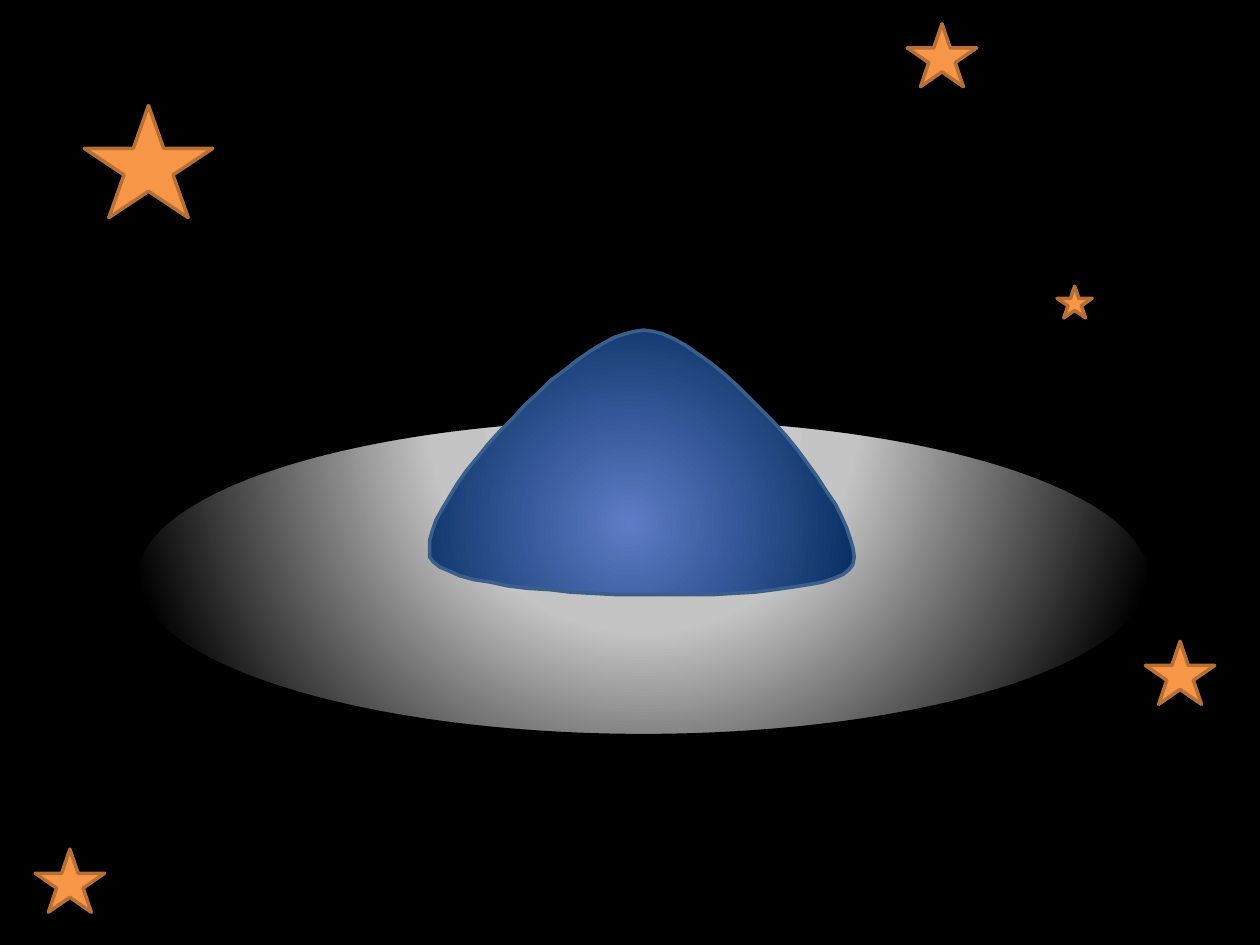
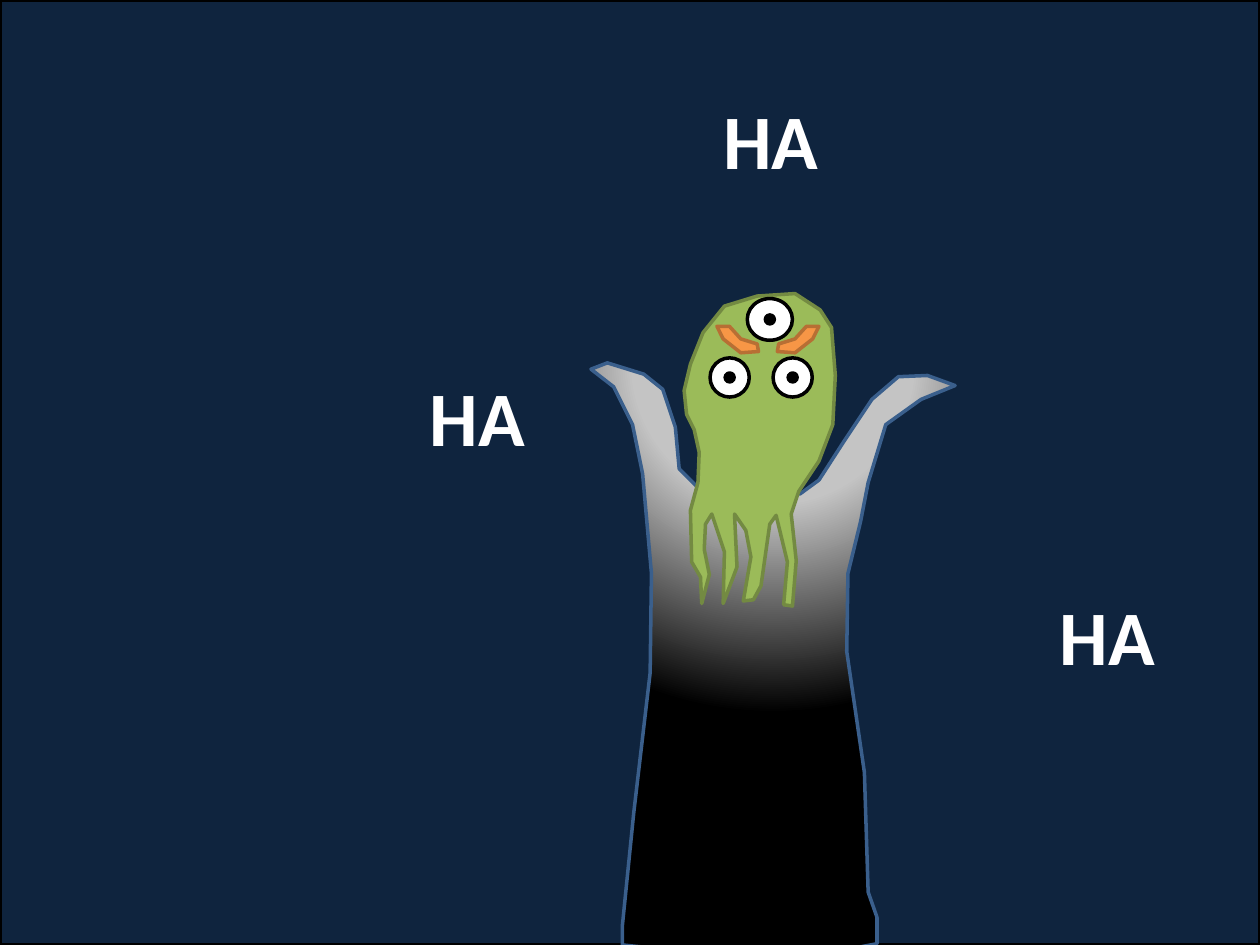
"""Builds two slides: a flying saucer among stars and a laughing alien."""
from lxml.etree import SubElement
from pptx import Presentation
from pptx.dml.color import RGBColor
from pptx.enum.shapes import MSO_SHAPE as SHAPE
from pptx.enum.text import MSO_AUTO_SIZE as AUTO
from pptx.oxml.ns import qn
from pptx.util import Cm, Pt

BLACK, WHITE, NIGHT = "000000", "FFFFFF", "0F243E"
ORANGE, RUST = "F79646", "B76F34"
GREEN, MOSS, STEEL = "9BBB59", "738A42", "3A5F8C"
METAL = ([(0, "CCCCCC"), (40, "C4C4C4"), (100, BLACK)], (50, -80, 50, 180))
GLASS = ([(0, "5E7CC5"), (100, "00295C")], (47, 73, 53, 27))
FONT = "Calibri"
UNITS_PER_INCH = 100
BROW_AXIS_SUM = 1219

BIG, MEDIUM, SMALL = (2.59, 2.26), (1.4, 1.27), (0.71, 0.64)
STARS = [(1.7, 2.13, BIG), (18.29, 0.48, MEDIUM), (23.09, 12.93, MEDIUM),
         (0.71, 17.12, MEDIUM), (21.31, 5.77, SMALL)]
EYES = [(14.71, 7.61, 0.79, 0.79), (15.98, 7.61, 0.79, 0.79),
        (15.52, 6.44, 0.91, 0.84)]
LAUGHS = [(8.41, 7.32), (21.11, 11.73), (14.33, 1.75)]

DOME = [(344, 446), (317, 415), (456, 261), (511, 262), (566, 263),
        (702, 422), (674, 452), (647, 482), (371, 478), (344, 446)]

ROBE = [
    (571, 391), (553, 386), (539, 372), (536, 339), (526, 309), (511, 297),
    (482, 288), (469, 293), (487, 307), (502, 337), (510, 376), (517, 455),
    (516, 534), (503, 645), (494, 734), (494, 750), (622, 763), (696, 749),
    (696, 728), (689, 708), (686, 613), (672, 517), (673, 455), (683, 414),
    (689, 383), (703, 337), (731, 317), (758, 306), (736, 298), (713, 299),
    (692, 317), (670, 350), (650, 381), (635, 392)]

BODY = [
    (551, 341), (555, 359), (554, 383), (548, 405), (549, 446), (556, 458),
    (557, 479), (563, 456), (559, 436), (560, 416), (565, 408), (575, 438),
    (574, 479), (585, 450), (583, 408), (592, 421), (596, 442), (590, 477),
    (598, 476), (604, 465), (611, 416), (616, 409), (625, 446), (622, 480),
    (629, 481), (632, 445), (628, 408), (634, 390), (650, 366), (661, 337),
    (663, 298), (660, 260), (651, 246), (631, 233), (601, 235), (575, 243),
    (558, 264), (548, 289), (543, 310), (545, 329)]

LEFT_BROW = [(569, 259), (579, 259), (588, 269), (601, 273), (602, 279),
             (588, 280), (574, 269)]
RIGHT_BROW = [(BROW_AXIS_SUM - x, y) for x, y in LEFT_BROW]


def rgb(hex_color):
    """Turn a hex string into a colour."""
    return RGBColor.from_string(hex_color)


def bezier(corners, steps=24):
    """Return points along one cubic curve, without its end."""
    points = []
    for i in range(steps):
        t = i / steps
        u = 1 - t
        weights = (u ** 3, 3 * t * u * u, 3 * t * t * u, t ** 3)
        points.append(tuple(
            sum(w * v for w, v in zip(weights, values))
            for values in zip(*corners)))
    return points


class Scene:
    """Holds the shared style and the current slide."""

    def __init__(self, prs):
        """Keep the presentation."""
        self.prs = prs
        self.s = None

    def new_slide(self):
        """Start a blank slide on black."""
        self.s = self.prs.slides.add_slide(self.prs.slide_layouts[6])
        fill = self.s.background.fill
        fill.solid()
        fill.fore_color.rgb = rgb(BLACK)

    def paint(self, sp, fill, line):
        """Give a shape its fill and outline."""
        sp.shadow.inherit = False
        if isinstance(fill, str):
            sp.fill.solid()
            sp.fill.fore_color.rgb = rgb(fill)
        else:
            self.radial(sp, *fill)
        sp.line.color.rgb = rgb(line)
        sp.line.width = Pt(2)

    def radial(self, sp, stops, focus):
        """Fill a shape with a circular gradient."""
        sp.fill.gradient()
        grad = sp._element.spPr.find(qn("a:gradFill"))
        grad.clear()
        grad.set("rotWithShape", "1")
        stop_list = SubElement(grad, qn("a:gsLst"))
        for pos, color in stops:
            stop = SubElement(stop_list, qn("a:gs"), pos=str(pos * 1000))
            SubElement(stop, qn("a:srgbClr"), val=color)
        circle = SubElement(grad, qn("a:path"))
        circle.set("path", "circle")
        rect = SubElement(circle, qn("a:fillToRect"))
        for side, value in zip("ltrb", focus):
            rect.set(side, str(value * 1000))

    def shape(self, kind, box, fill, line):
        """Add a preset shape; the box is in centimetres."""
        sp = self.s.shapes.add_shape(kind, *(Cm(v) for v in box))
        self.paint(sp, fill, line)

    def outline(self, points, fill, line):
        """Add a closed freeform through the points."""
        builder = self.s.shapes.build_freeform(
            *points[0], scale=Cm(2.54) / UNITS_PER_INCH)
        builder.add_line_segments(points[1:], close=True)
        self.paint(builder.convert_to_shape(), fill, line)

    def eye(self, cx, cy, width, height):
        """Add an eyeball with its pupil around a centre."""
        for w, h, fill in ((width, height, WHITE), (0.18, 0.18, BLACK)):
            self.shape(SHAPE.OVAL, (cx - w / 2, cy - h / 2, w, h), fill, BLACK)

    def shout(self, text, left, top):
        """Add a large bold word."""
        box = self.s.shapes.add_textbox(Cm(left), Cm(top), Cm(2.79), Cm(2.13))
        tf = box.text_frame
        tf.word_wrap = False
        tf.auto_size = AUTO.SHAPE_TO_FIT_TEXT
        r = tf.paragraphs[0].add_run()
        r.text = text
        r.font.name, r.font.size, r.font.bold = FONT, Pt(44), True
        r.font.color.rgb = rgb(WHITE)


def saucer_slide(scene):
    """Draw the saucer among the stars."""
    scene.new_slide()
    for left, top, size in STARS:
        scene.shape(SHAPE.STAR_5_POINT, (left, top, *size), ORANGE, RUST)
    scene.shape(SHAPE.OVAL, (2.74, 8.43, 20.45, 6.4), METAL, BLACK)
    dome = [p for i in range(0, len(DOME) - 1, 3)
            for p in bezier(DOME[i:i + 4])]
    scene.outline(dome, GLASS, STEEL)


def alien_slide(scene):
    """Draw the laughing alien in its robe."""
    scene.new_slide()
    scene.shape(SHAPE.RECTANGLE, (0, 0, 25.4, 19.05), NIGHT, BLACK)
    scene.outline(ROBE, METAL, STEEL)
    scene.outline(BODY, GREEN, MOSS)
    for brow in (LEFT_BROW, RIGHT_BROW):
        scene.outline(brow, ORANGE, RUST)
    for eye in EYES:
        scene.eye(*eye)
    for place in LAUGHS:
        scene.shout("HA", *place)


def main():
    """Build and save the slides."""
    prs = Presentation()
    prs.slide_width, prs.slide_height = Cm(25.4), Cm(19.05)
    scene = Scene(prs)
    saucer_slide(scene)
    alien_slide(scene)
    prs.save("out.pptx")


if __name__ == "__main__":
    main()
